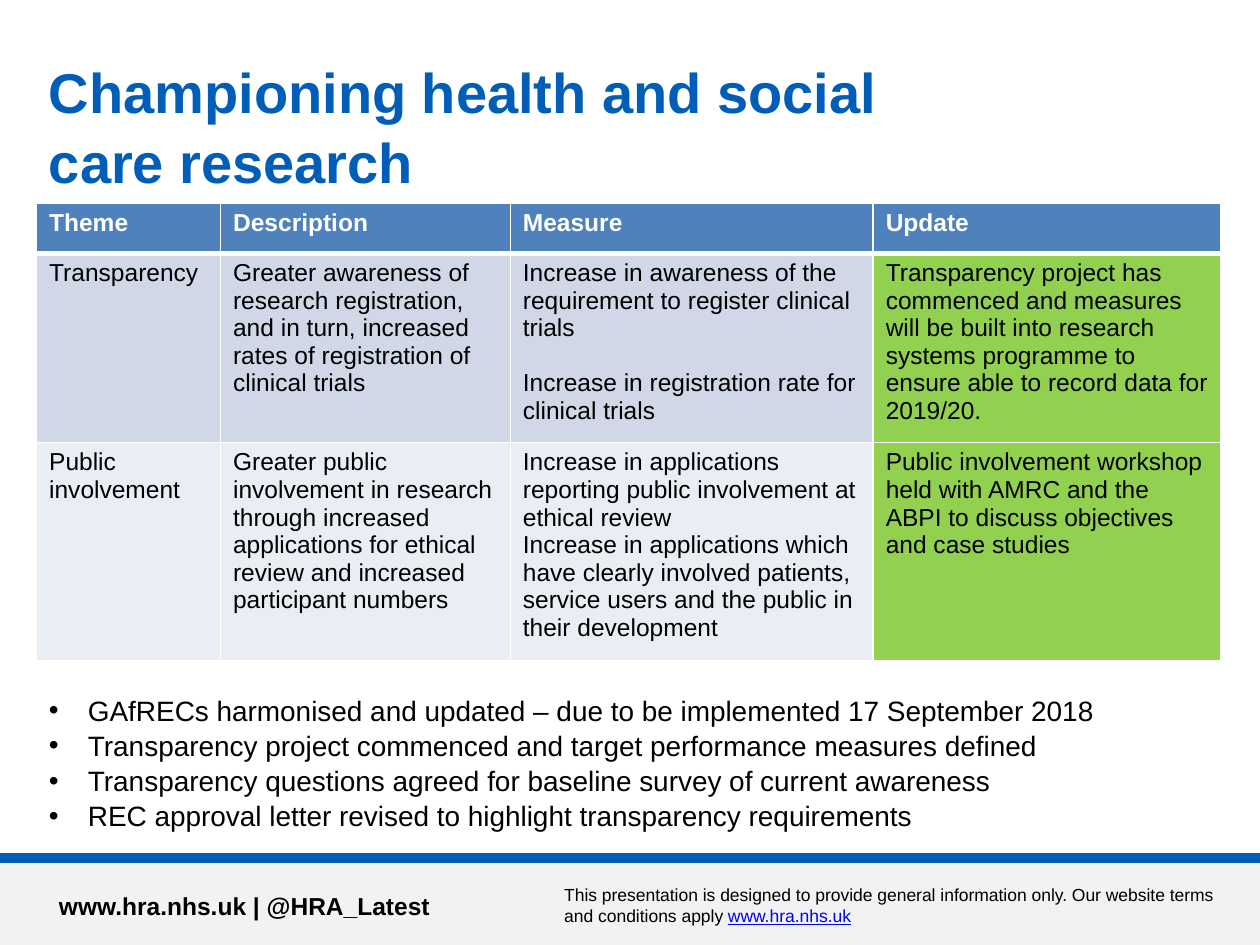
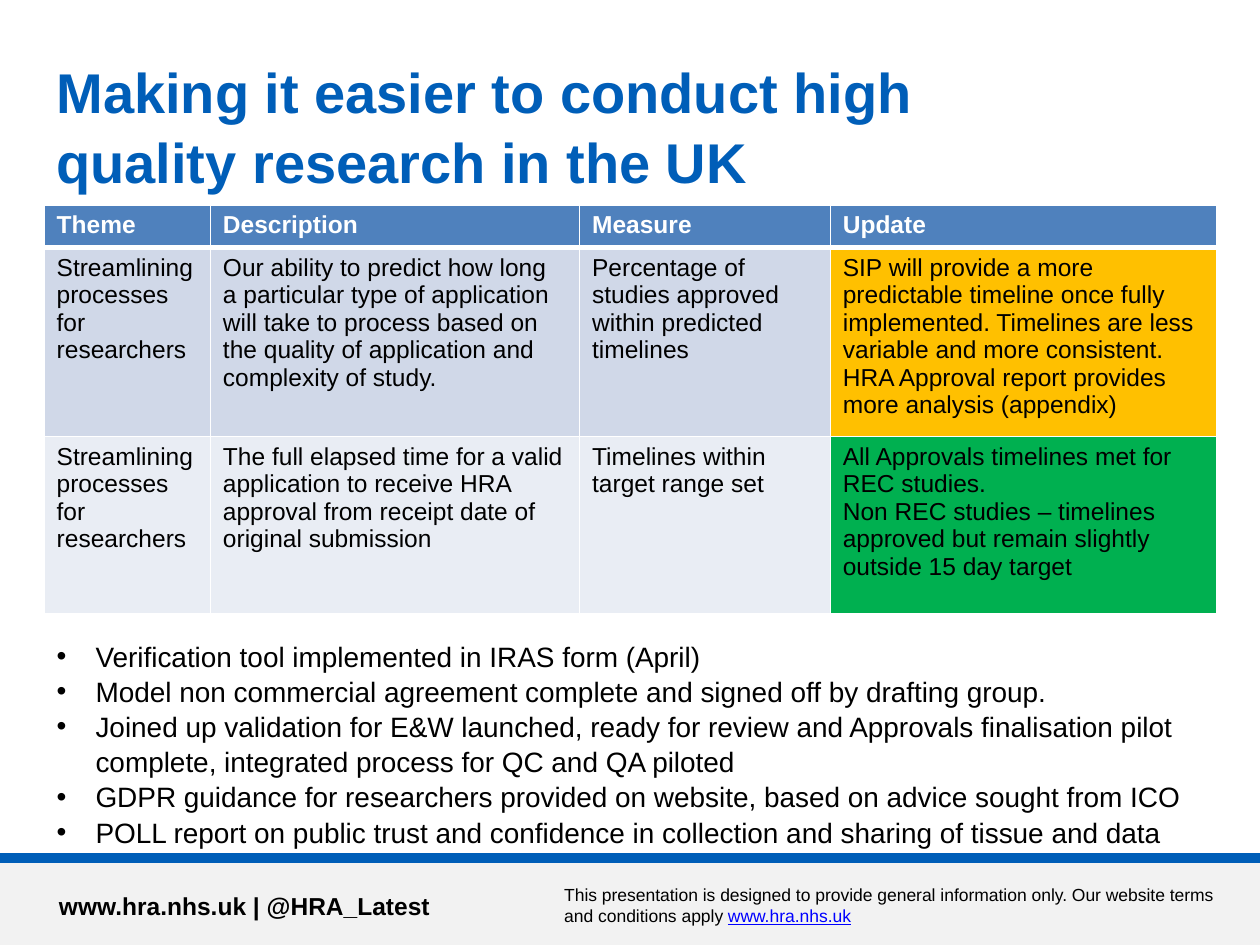
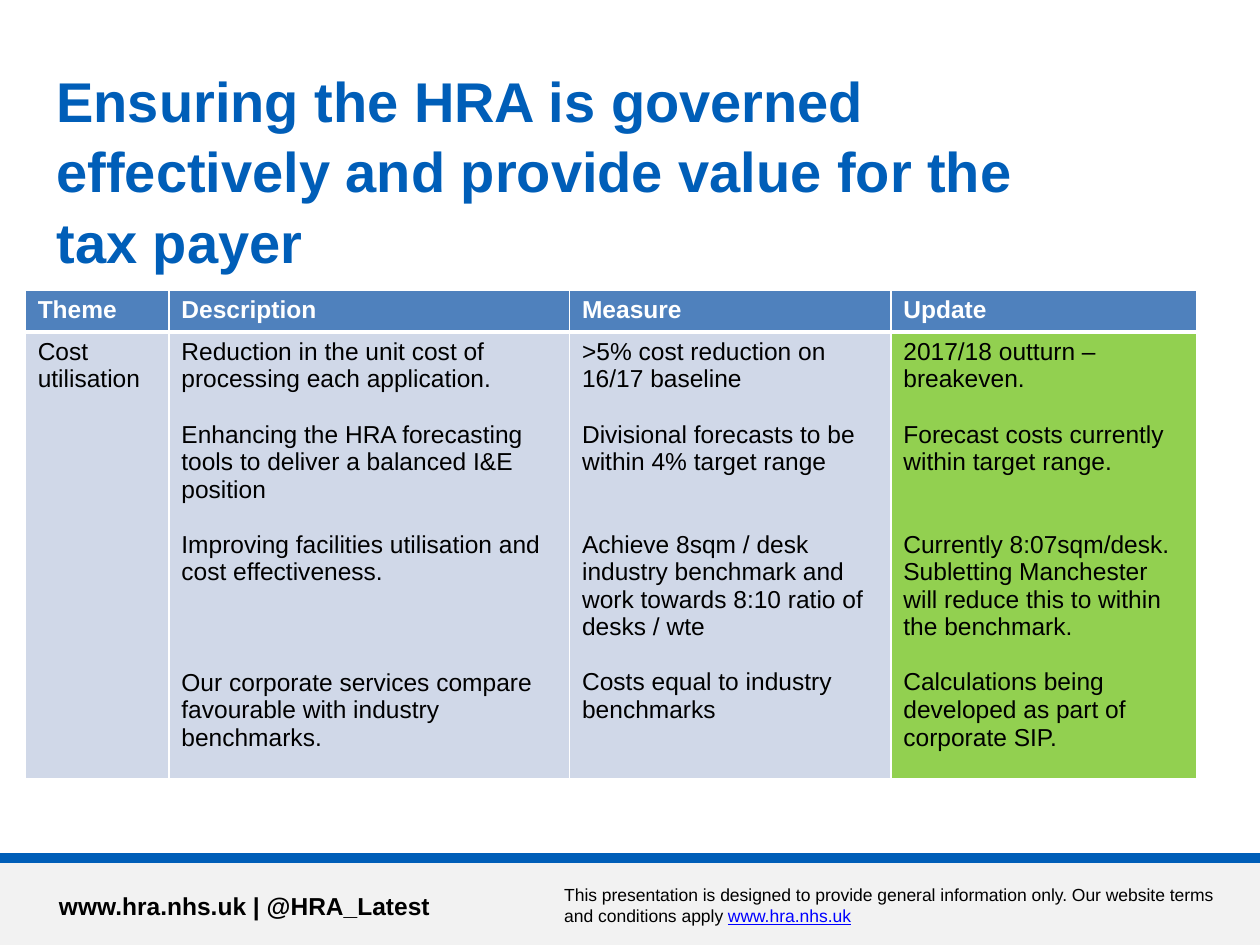
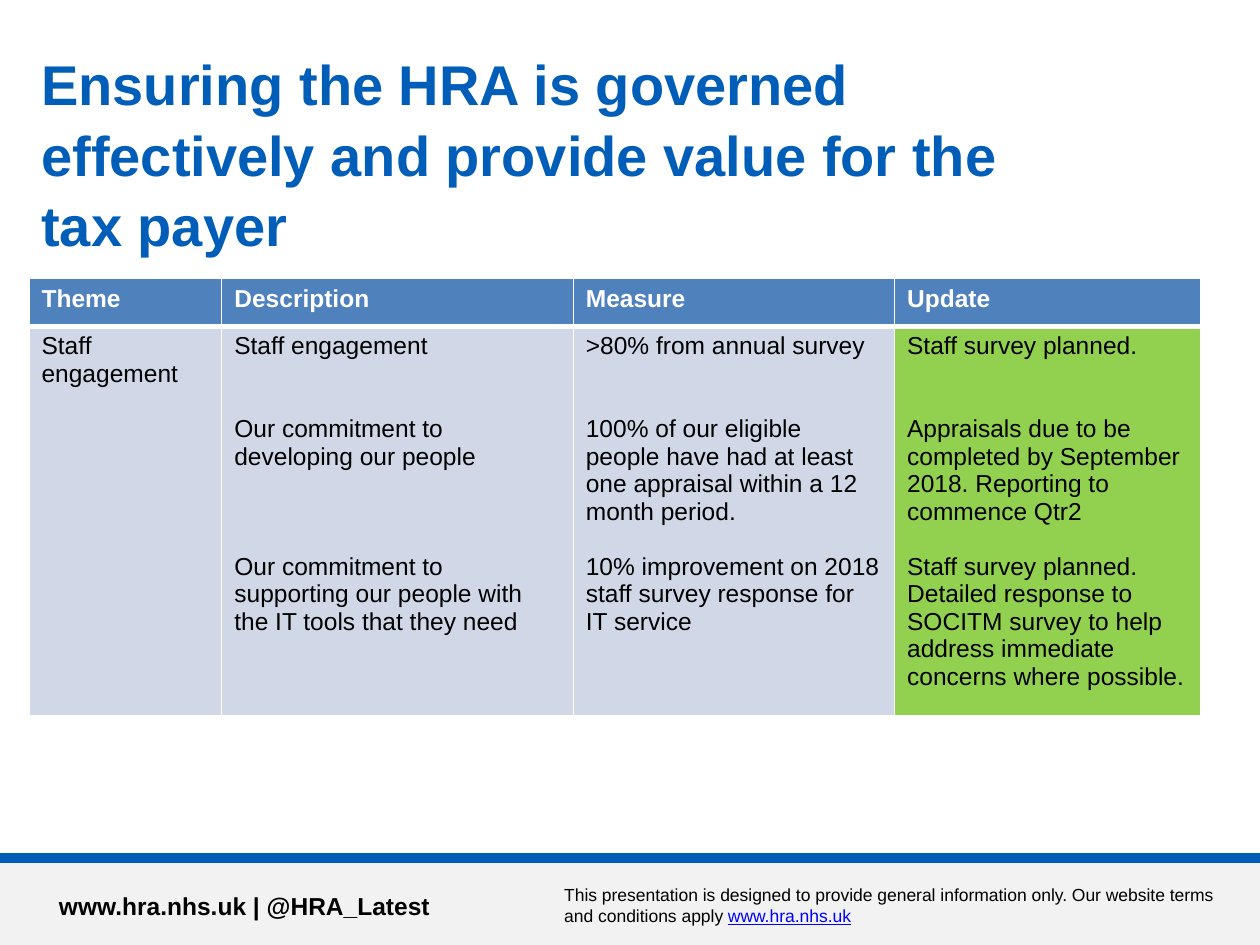
from lxml import etree
from pptx import Presentation
from pptx.dml.color import RGBColor
from pptx.enum.shapes import MSO_CONNECTOR, MSO_SHAPE
from pptx.oxml.ns import qn
from pptx.util import Pt

RECTANGLE = MSO_SHAPE.RECTANGLE
STRAIGHT = MSO_CONNECTOR.STRAIGHT

PX = 9144  # EMU per px, 100 px to the inch
FONT = "Arial"
BLUE, PALE_GREY, BLACK, WHITE, LINK = "005EB8", "F2F2F2", "000000", "FFFFFF", "0000FF"
HEADER, BANDS = "4F81BD", ["D0D8E8", "E9EDF4"]
LIME, AMBER, GREEN = "92D050", "FFC000", "00B050"
BLANK_LINE = 15.75  # points, one line of table text
HEADINGS = ["Theme", "Description", "Measure", "Update"]
GOVERNANCE = "Ensuring the HRA is governed\veffectively and provide value for the tax payer"
STREAMLINING = "Streamlining processes for researchers"


def rgb(value):
    return RGBColor.from_string(value)


def add_text(page, bounds, lines, size, color=BLACK, bold=False, spacing=None):
    box = page.shapes.add_textbox(*[n * PX for n in bounds])
    box.text_frame.word_wrap = True
    box.text_frame.text = "\n".join(lines)
    for para in box.text_frame.paragraphs:
        if spacing:
            para.line_spacing = spacing
        for span in para.runs:
            span.font.name, span.font.size, span.font.bold = FONT, Pt(size), bold
            span.font.color.rgb = rgb(color)
    return box


# Content: a cell is a string, or a list of (blank lines before, text)
slides = [
    {
        "title": "Championing health and social care research",
        "title_at": (29, 38, 723, 74),
        "table_at": (29, 161),
        "columns": [146, 230, 288, 276],
        "heights": [40, 141, 162],
        "status": [LIME, LIME],
        "rows": [
            [
                "Transparency",
                "Greater awareness of research registration, and in turn, increased "
                "rates of registration of clinical trials",
                [(0, "Increase in awareness of the requirement to register clinical trials"),
                 (1, "Increase in registration rate for clinical trials")],
                "Transparency project has commenced and measures will be built into research "
                "systems programme to ensure able to record data for 2019/20.",
            ],
            [
                "Public involvement",
                "Greater public involvement in research through increased applications for "
                "ethical review and increased participant numbers",
                [(0, "Increase in applications reporting public involvement at ethical review"),
                 (0, "Increase in applications which have clearly involved patients, "
                     "service users and the public in their development")],
                "Public involvement workshop held with AMRC and the ABPI to discuss "
                "objectives and case studies",
            ],
        ],
        "bullets_at": (29, 544, 940, 118),
        "bullets": [
            "GAfRECs harmonised and updated – due to be implemented 17 September 2018",
            "Transparency project commenced and target performance measures defined",
            "Transparency questions agreed for baseline survey of current awareness",
            "REC approval letter revised to highlight transparency requirements",
        ],
    },
    {
        "title": "Making it easier to conduct high quality research in the UK",
        "title_at": (35, 38, 850, 74),
        "table_at": (35, 163),
        "columns": [132, 293, 199, 307],
        "heights": [31, 141, 141],
        "status": [AMBER, GREEN],
        "rows": [
            [
                STREAMLINING,
                "Our ability to predict how long a particular type of application will take "
                "to process based on the quality of application and complexity of study.",
                "Percentage of studies approved within predicted timelines",
                "SIP will provide a more predictable timeline once fully implemented. "
                "Timelines are less variable and more consistent. "
                "HRA Approval report provides more analysis (appendix)",
            ],
            [
                STREAMLINING,
                "The full elapsed time for a valid application to receive HRA approval from "
                "receipt date of original submission",
                "Timelines within target range set",
                [(0, "All Approvals timelines met for REC studies."),
                 (0, "Non REC studies – timelines approved but remain slightly "
                     "outside 15 day target")],
            ],
        ],
        "bullets_at": (35, 501, 931, 172),
        "bullets": [
            "Verification tool implemented in IRAS form (April)",
            "Model non commercial agreement complete and signed off by drafting group.",
            "Joined up validation for E&W launched, ready for review and Approvals "
            "finalisation pilot complete, integrated process for QC and QA piloted",
            "GDPR guidance for researchers provided on website, based on advice sought from ICO",
            "POLL report on public trust and confidence in collection and sharing of tissue and data",
        ],
    },
    {
        "title": GOVERNANCE,
        "title_at": (35, 45, 850, 74),
        "table_at": (20, 230),
        "columns": [114, 318, 255, 243],
        "heights": [31, 337],
        "status": [LIME],
        "rows": [
            [
                "Cost utilisation",
                [(0, "Reduction in the unit cost of processing each application."),
                 (1, "Enhancing the HRA forecasting tools to deliver a balanced I&E position"),
                 (1, "Improving facilities utilisation and cost effectiveness."),
                 (3, "Our corporate services compare favourable with industry benchmarks.")],
                [(0, ">5% cost reduction on 16/17 baseline"),
                 (1, "Divisional forecasts to be within 4% target range"),
                 (2, "Achieve 8sqm / desk industry benchmark and work towards 8:10 ratio "
                     "of desks / wte"),
                 (1, "Costs equal to industry benchmarks")],
                [(0, "2017/18 outturn – breakeven."),
                 (1, "Forecast costs currently within target range."),
                 (2, "Currently 8:07sqm/desk. Subletting Manchester will reduce this to "
                     "within the benchmark."),
                 (1, "Calculations being developed as part of corporate SIP.")],
            ],
        ],
    },
    {
        "title": GOVERNANCE,
        "title_at": (23, 32, 850, 74),
        "table_at": (23, 221),
        "columns": [153, 279, 255, 243],
        "heights": [38, 293],
        "status": [LIME],
        "rows": [
            [
                "Staff engagement",
                [(0, "Staff engagement"),
                 (2, "Our commitment to developing our people"),
                 (3, "Our commitment to supporting our people with the IT tools that they need")],
                [(0, ">80% from annual survey"),
                 (2, "100% of our eligible people have had at least one appraisal within "
                     "a 12 month period."),
                 (1, "10% improvement on 2018 staff survey response for IT service")],
                [(0, "Staff survey planned."),
                 (2, "Appraisals due to be completed by September 2018. "
                     "Reporting to commence Qtr2"),
                 (1, "Staff survey planned. Detailed response to SOCITM survey to help "
                     "address immediate concerns where possible.")],
            ],
        ],
    },
]

deck = Presentation()
deck.slide_width, deck.slide_height = 1000 * PX, 750 * PX

for content in slides:
    page = deck.slides.add_slide(deck.slide_layouts[6])

    # Footer band and rule
    band = page.shapes.add_shape(RECTANGLE, 0, 681 * PX, 1000 * PX, 69 * PX)
    band.shadow.inherit = False
    band.fill.solid()
    band.fill.fore_color.rgb = rgb(PALE_GREY)
    band.line.fill.background()
    rule = page.shapes.add_connector(STRAIGHT, 0, 681 * PX, 1000 * PX, 681 * PX)
    rule.line.color.rgb = rgb(BLUE)
    rule.line.width = Pt(6)
    etree.SubElement(rule.element.spPr, qn("a:effectLst"))

    # Footer text
    add_text(page, (37, 702, 584, 40), ["www.hra.nhs.uk | @HRA_Latest"], 14, bold=True)
    notice = add_text(page, (438, 697, 540, 74), [
        "This presentation is designed to provide general information only. "
        "Our website terms and conditions apply "], 10)
    address = notice.text_frame.paragraphs[0].add_run()
    address.text = "www.hra.nhs.uk"
    address.font.name, address.font.size, address.font.underline = FONT, Pt(10), True
    address.font.color.rgb = rgb(LINK)

    # Title
    add_text(page, content["title_at"], [content["title"]], 32, BLUE, True, 1.05)

    # Table
    rows = [HEADINGS] + content["rows"]
    left, top = content["table_at"]
    widths, heights = content["columns"], content["heights"]
    table = page.shapes.add_table(len(rows), len(widths), left * PX, top * PX,
                                  sum(widths) * PX, sum(heights) * PX).table
    for column, width in zip(table.columns, widths):
        column.width = width * PX
    for row, height in zip(table.rows, heights):
        row.height = height * PX

    for r, row in enumerate(rows):
        for c, entry in enumerate(row):
            cell = table.cell(r, c)
            parts = [(0, entry)] if isinstance(entry, str) else entry
            cell.text_frame.text = "\n".join(text for _, text in parts)
            for para, (blank_lines, _) in zip(cell.text_frame.paragraphs, parts):
                if blank_lines:
                    para.space_before = Pt(blank_lines * BLANK_LINE)
                for span in para.runs:
                    span.font.name, span.font.size, span.font.bold = FONT, Pt(14), r == 0
                    span.font.color.rgb = rgb(WHITE if r == 0 else BLACK)

            # White borders, thick under the header
            properties = cell._tc.get_or_add_tcPr()
            for side in "LRTB":
                thick = (r, side) in [(0, "B"), (1, "T")]
                border = etree.SubElement(properties, qn("a:ln" + side),
                                          w=str(Pt(3 if thick else 1)))
                fill = etree.SubElement(border, qn("a:solidFill"))
                etree.SubElement(fill, qn("a:srgbClr"), val=WHITE)

            if r == 0:
                shade = HEADER
            elif c == 3:
                shade = content["status"][r - 1]
            else:
                shade = BANDS[r - 1]
            cell.fill.solid()
            cell.fill.fore_color.rgb = rgb(shade)

    # Bullets
    if "bullets" in content:
        box = add_text(page, content["bullets_at"], content["bullets"], 16, spacing=1.05)
        for para in box.text_frame.paragraphs:
            properties = para._p.get_or_add_pPr()
            properties.set("marL", str(31 * PX))
            properties.set("indent", str(-31 * PX))
            etree.SubElement(properties, qn("a:buFont"), typeface=FONT)
            etree.SubElement(properties, qn("a:buChar"), char="•")

deck.save("out.pptx")
